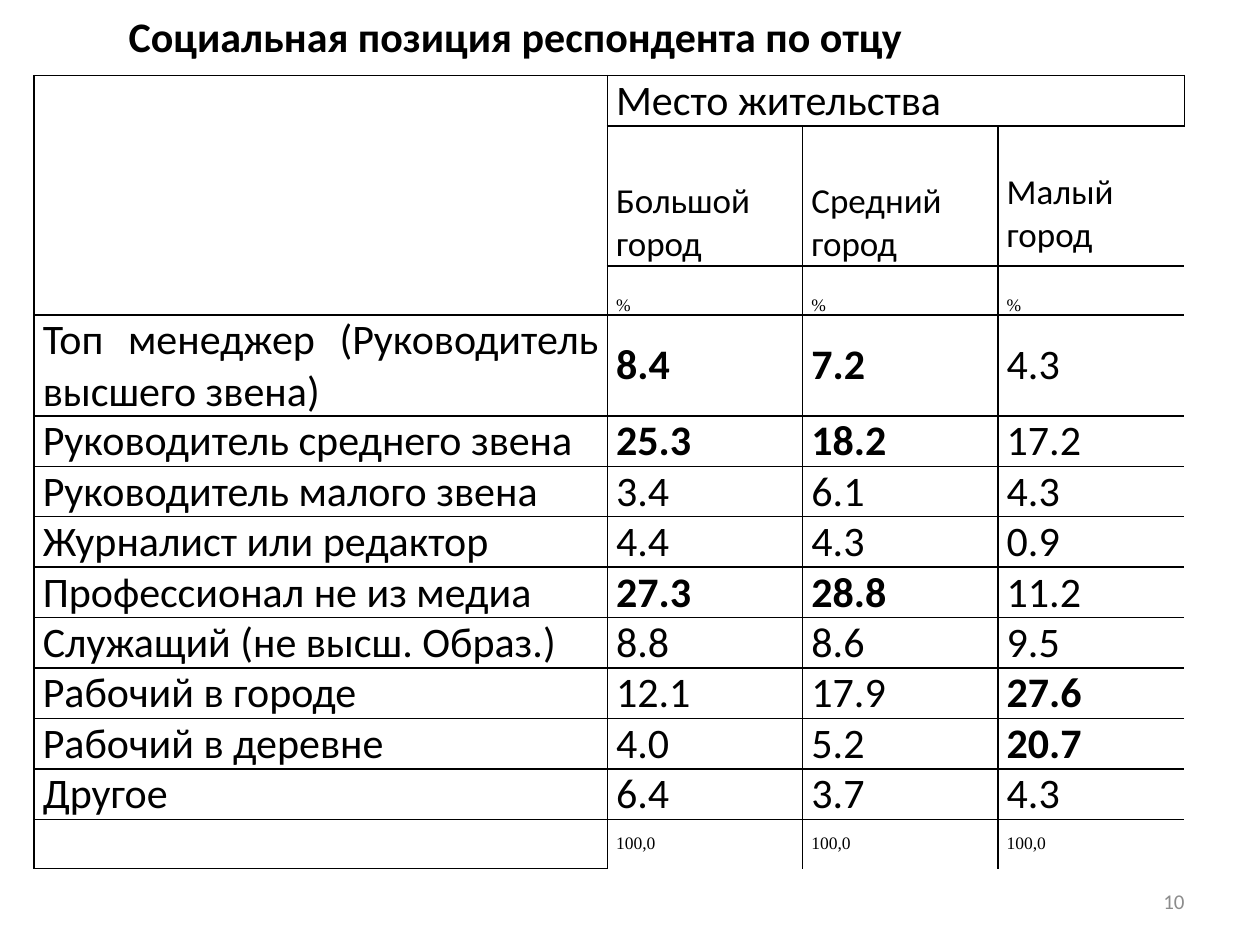
from lxml import etree
from pptx import Presentation
from pptx.dml.color import RGBColor
from pptx.enum.text import MSO_ANCHOR, PP_ALIGN
from pptx.oxml.ns import qn
from pptx.util import Inches, Pt

TOP, MIDDLE, BOTTOM = MSO_ANCHOR.TOP, MSO_ANCHOR.MIDDLE, MSO_ANCHOR.BOTTOM
CENTER, RIGHT, JUSTIFY = PP_ALIGN.CENTER, PP_ALIGN.RIGHT, PP_ALIGN.JUSTIFY
TITLE_ONLY = 5

COLUMN_WIDTHS = [4.55, 1.55, 1.55, 1.48]
ROW_HEIGHT, CITY_ROW_HEIGHT = 0.39, 1.11
CITY_ROW, PERCENT_ROW = 1, 2
ROWS = [
    ["", "Место жительства", "", ""],
    ["", "Большой город", "Средний город", "Малый город"],
    ["", "%", "%", "%"],
    ["Топ менеджер (Руководитель высшего звена)", "8.4", "7.2", "4.3"],
    ["Руководитель среднего звена", "25.3", "18.2", "17.2"],
    ["Руководитель малого звена", "3.4", "6.1", "4.3"],
    ["Журналист или редактор", "4.4", "4.3", "0.9"],
    ["Профессионал не из медиа", "27.3", "28.8", "11.2"],
    ["Служащий (не высш. Образ.)", "8.8", "8.6", "9.5"],
    ["Рабочий в городе", "12.1", "17.9", "27.6"],
    ["Рабочий в деревне", "4.0", "5.2", "20.7"],
    ["Другое", "6.4", "3.7", "4.3"],
    ["", "100,0", "100,0", "100,0"],
]
HIGHLIGHTS = {"8.4", "7.2", "25.3", "18.2", "27.3", "28.8", "27.6", "20.7"}
LAST_ROW, LAST_COLUMN = len(ROWS) - 1, len(COLUMN_WIDTHS) - 1


def rgb(color):
    return RGBColor.from_string(color)


class SlideBuilder:
    font, small_font = "Calibri", "Times New Roman"
    black, gray = "000000", "8C8C8C"

    def __init__(self, prs):
        self.s = prs.slides.add_slide(prs.slide_layouts[TITLE_ONLY])

    def set_text(self, tf, text, size, align, color=black, bold=False, font=font):
        tf.word_wrap = True
        p = tf.paragraphs[0]
        p.text, p.alignment = text, align
        f = p.font
        f.name, f.size, f.bold = font, Pt(size), bold
        f.color.rgb = rgb(color)

    def place(self, sp, left, top, width, height):
        sp.left, sp.top = Inches(left), Inches(top)
        sp.width, sp.height = Inches(width), Inches(height)
        sp.text_frame.vertical_anchor = MIDDLE

    def title(self, text, *box):
        sp = self.s.shapes.title
        self.place(sp, *box)
        self.set_text(sp.text_frame, text, 24, CENTER, bold=True)

    def page_number(self, text, *box):
        sp = self.s.shapes.add_textbox(0, 0, 0, 0)
        self.place(sp, *box)
        self.set_text(sp.text_frame, text, 12, RIGHT, self.gray)

    def borders(self, cell, hidden):
        """Draw the four cell edges, leaving out those named in hidden."""
        tcPr = cell._tc.get_or_add_tcPr()
        for i, side in enumerate("LRTB"):
            ln = etree.Element(qn(f"a:ln{side}"), w=str(Pt(1)))
            if side in hidden:
                etree.SubElement(ln, qn("a:noFill"))
            else:
                fill = etree.SubElement(ln, qn("a:solidFill"))
                etree.SubElement(fill, qn("a:srgbClr"), val=self.black)
            tcPr.insert(i, ln)

    def cell(self, cell, text, row, column):
        cell.fill.background()
        hidden = "R" if column == LAST_COLUMN and row > 0 else ""
        if row == LAST_ROW and column > 0:
            hidden += "B"
        self.borders(cell, hidden)

        cell.margin_left = cell.margin_right = Inches(0.07)
        pad = 0.07 if (row, column) == (CITY_ROW, LAST_COLUMN) else 0
        cell.margin_top = cell.margin_bottom = Inches(pad)
        if row <= PERCENT_ROW:
            cell.vertical_anchor = BOTTOM
        else:
            cell.vertical_anchor = MIDDLE if column else TOP
        if not text:
            return
        size, font = 24, self.font
        if row == CITY_ROW:
            size = 20
        elif row in (PERCENT_ROW, LAST_ROW):
            size, font = 10, self.small_font
        self.set_text(cell.text_frame, text, size, JUSTIFY,
                      bold=text in HIGHLIGHTS, font=font)

    def table(self, left, top):
        heights = [ROW_HEIGHT] * len(ROWS)
        heights[CITY_ROW] = CITY_ROW_HEIGHT
        table = self.s.shapes.add_table(
            len(ROWS), len(COLUMN_WIDTHS), Inches(left), Inches(top),
            Inches(sum(COLUMN_WIDTHS)), Inches(sum(heights))).table
        table.first_row = table.horz_banding = False
        for column, width in zip(table.columns, COLUMN_WIDTHS):
            column.width = Inches(width)
        for row, height in zip(table.rows, heights):
            row.height = Inches(height)
        for r, texts in enumerate(ROWS):
            for c, text in enumerate(texts):
                self.cell(table.cell(r, c), text, r, c)
        table.cell(0, 0).merge(table.cell(PERCENT_ROW, 0))
        table.cell(0, 1).merge(table.cell(0, LAST_COLUMN))


def main():
    prs = Presentation()
    prs.slide_width, prs.slide_height = Inches(10), Inches(7.5)
    slide = SlideBuilder(prs)
    slide.page_number("10", 7.17, 6.95, 2.33, 0.4)
    slide.table(0.27, 0.6)
    slide.title("Социальная позиция респондента по отцу", 0.27, 0.03, 7.64, 0.5)
    prs.save("out.pptx")


if __name__ == "__main__":
    main()
